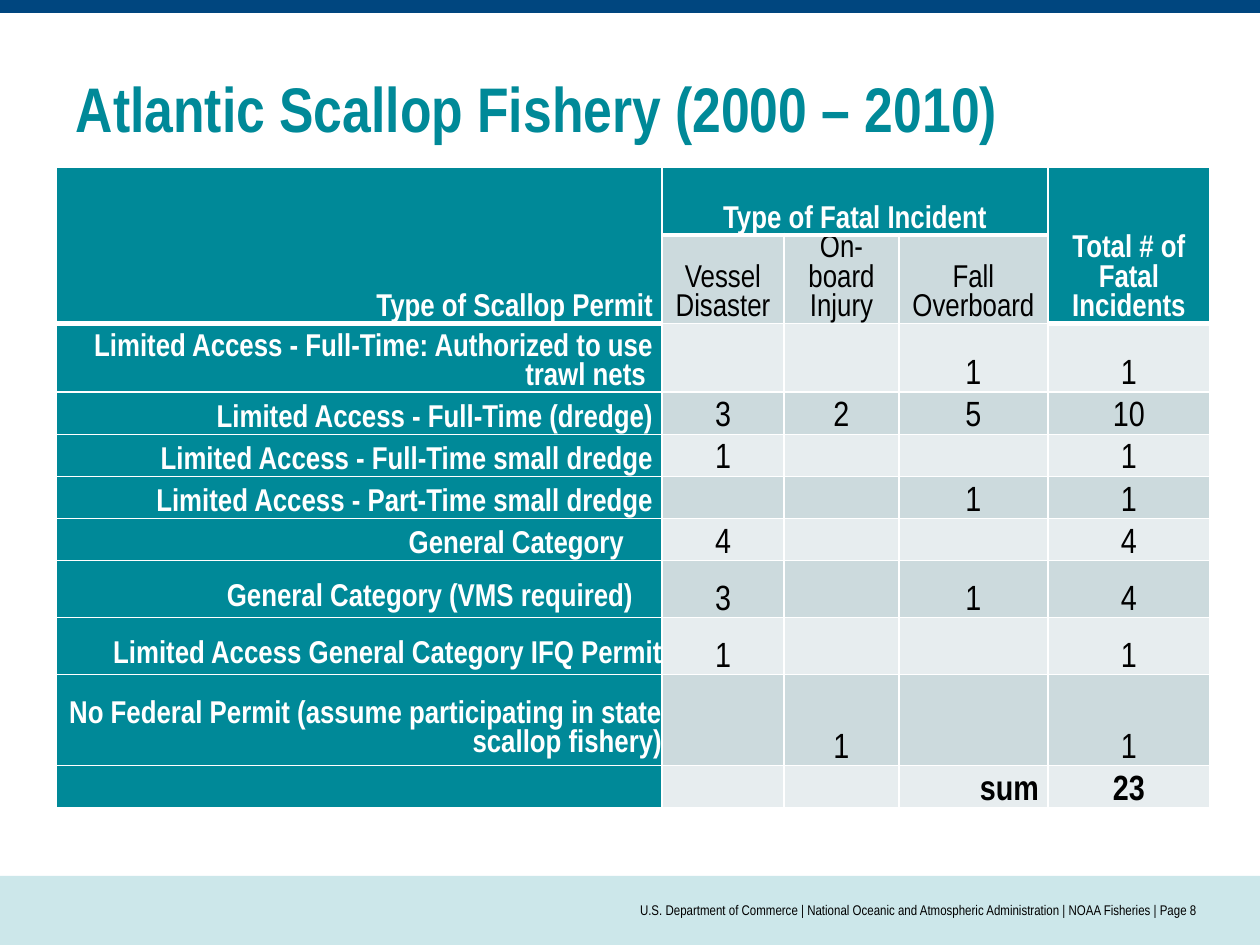
from dataclasses import dataclass

from lxml.etree import SubElement
from pptx import Presentation
from pptx.dml.color import RGBColor
from pptx.enum.shapes import MSO_SHAPE as Shape
from pptx.enum.text import MSO_ANCHOR as Anchor, PP_ALIGN as Align
from pptx.oxml.ns import qn
from pptx.util import Pt


@dataclass(frozen=True)
class Theme:
    font: str = "Arial Narrow"
    teal: str = "008998"
    navy: str = "00467F"
    pale: str = "CCE7EA"
    dark_band: str = "CCDADD"
    light_band: str = "E7EDEF"
    white: str = "FFFFFF"
    black: str = "000000"
    title: int = 36
    label: int = 18
    label_pitch: float = 16.8
    value: int = 20
    footer: int = 8
    thin: int = 1
    thick: int = 3


THEME = Theme()
PAD = 9
COLS = [606, 122, 115, 149, 162]
ROWS = [68, 88, 69, 42, 42, 41, 42, 57, 57, 91, 41]
INCIDENTS = ["Vessel Disaster", "On-board Injury", "Fall Overboard"]
LABEL = dict(anchor=Anchor.BOTTOM, inset=(PAD, 0, PAD, 0))
LOW = dict(anchor=Anchor.MIDDLE, inset=(0, 20, 0, 0))
PERMITS = [
    ("Limited Access - Full-Time: Authorized to use trawl nets ", ["", "", "1", "1"], LABEL),
    ("Limited Access - Full-Time (dredge)", ["3", "2", "5", "10"], LABEL),
    ("Limited Access - Full-Time small dredge", ["1", "", "", "1"], LABEL),
    ("Limited Access - Part-Time small dredge", ["", "", "1", "1"], LABEL),
    ("General Category", ["4", "", "", "4"], dict(LABEL, inset=(PAD, 0, 38, 0))),
    ("General Category (VMS required)", ["3", "", "1", "4"], dict(LOW, inset=(0, 20, 29, 0))),
    ("Limited Access General Category IFQ Permit", ["1", "", "", "1"], LOW),
    ("No Federal Permit (assume participating in state scallop fishery)", ["", "1", "", "1"], LOW),
]


def px(n):
    return round(n * 914400 / 126)


def rgb(color):
    return RGBColor.from_string(color)


def write(tf, text, size=THEME.label, color=THEME.black, bold=False, align=Align.CENTER):
    p = tf.paragraphs[0]
    p.alignment = align
    if size == THEME.label:
        p.line_spacing = Pt(THEME.label_pitch)
    r = p.add_run()
    r.text = text
    r.font.name = THEME.font
    r.font.size = Pt(size)
    r.font.bold = bold
    r.font.color.rgb = rgb(color)


def add_text(slide, box, text, inset, **fmt):
    tf = slide.shapes.add_textbox(*map(px, box)).text_frame
    tf.word_wrap = True
    tf.vertical_anchor = Anchor.MIDDLE
    tf.margin_left = tf.margin_right = px(inset)
    write(tf, text, **fmt)


def add_band(slide, box, color):
    sp = slide.shapes.add_shape(Shape.RECTANGLE, *map(px, box))
    sp.shadow.inherit = False
    sp.fill.solid()
    sp.fill.fore_color.rgb = rgb(color)
    sp.line.fill.background()


def add_header(slide, box):
    x, y, w, h = box
    add_band(slide, (x, y, w, 13), THEME.navy)
    add_text(slide, (x + 63, y + 61, w - 126, h - 63), "Atlantic Scallop Fishery (2000 – 2010)",
             13, size=THEME.title, color=THEME.teal, bold=True, align=Align.LEFT)


def add_footer(slide, box):
    x, y, w, h = box
    add_band(slide, box, THEME.pale)
    parts = ["U.S. Department of Commerce", "National Oceanic and Atmospheric Administration",
             "NOAA Fisheries", "Page 8"]
    add_text(slide, (x + 315, y - 1, w - 377, h), " | ".join(parts), 0,
             size=THEME.footer, align=Align.RIGHT)


def is_thick_below(row, col):
    return row == (1 if col in (0, 4) else 0)


def style_cell(cell, row, col, color):
    widths = {
        "L": THEME.thin,
        "R": THEME.thin,
        "T": THEME.thick if is_thick_below(row - 1, col) else THEME.thin,
        "B": THEME.thick if is_thick_below(row, col) else THEME.thin,
    }
    tc_pr = cell._tc.get_or_add_tcPr()
    for side, width in widths.items():
        ln = SubElement(tc_pr, qn(f"a:ln{side}"), w=str(Pt(width)))
        fill = SubElement(ln, qn("a:solidFill"))
        SubElement(fill, qn("a:srgbClr"), val=THEME.white)
    cell.fill.solid()
    cell.fill.fore_color.rgb = rgb(color)


def fill_cell(cell, text, anchor=Anchor.BOTTOM, inset=(PAD, 0, PAD, 0), **fmt):
    cell.vertical_anchor = anchor
    cell.margin_left, cell.margin_top, cell.margin_right, cell.margin_bottom = map(px, inset)
    if text:
        write(cell.text_frame, text, **fmt)


def add_permit_table(slide, box):
    frame = slide.shapes.add_table(len(ROWS), len(COLS), *map(px, box))
    table = frame.table
    table.first_row = table.horz_banding = False
    for column, width in zip(table.columns, COLS):
        column.width = px(width)
    for row, height in zip(table.rows, ROWS):
        row.height = px(height)

    for i in range(len(ROWS)):
        for j in range(len(COLS)):
            is_head = j == 0 or i == 0 or (i == 1 and j == 4)
            band = THEME.dark_band if i % 2 else THEME.light_band
            style_cell(table.cell(i, j), i, j, THEME.teal if is_head else band)
            fill_cell(table.cell(i, j), "")

    for start, end in [((0, 0), (1, 0)), ((0, 1), (0, 3)), ((0, 4), (1, 4))]:
        table.cell(*start).merge(table.cell(*end))

    head = dict(color=THEME.white, bold=True)
    fill_cell(table.cell(0, 0), "Type of Scallop Permit", align=Align.RIGHT, **head)
    fill_cell(table.cell(0, 1), "Type of Fatal Incident", **head)
    fill_cell(table.cell(0, 4), "Total # of Fatal Incidents", **head)
    for j, incident in enumerate(INCIDENTS, 1):
        fill_cell(table.cell(1, j), incident)

    for i, (permit, counts, layout) in enumerate(PERMITS, 2):
        fill_cell(table.cell(i, 0), permit, align=Align.RIGHT, **layout, **head)
        for j, count in enumerate(counts, 1):
            fill_cell(table.cell(i, j), count, size=THEME.value)

    last = len(ROWS) - 1
    fill_cell(table.cell(last, 3), "sum", size=THEME.value, bold=True, align=Align.RIGHT)
    fill_cell(table.cell(last, 4), "23", size=THEME.value, bold=True)


def main():
    prs = Presentation()
    prs.slide_width, prs.slide_height = px(1260), px(945)
    slide = prs.slides.add_slide(prs.slide_layouts[6])
    add_footer(slide, (0, 876, 1260, 69))
    add_header(slide, (0, 0, 1260, 156))
    add_permit_table(slide, (56, 167, sum(COLS), sum(ROWS)))
    prs.save("out.pptx")


if __name__ == "__main__":
    main()
